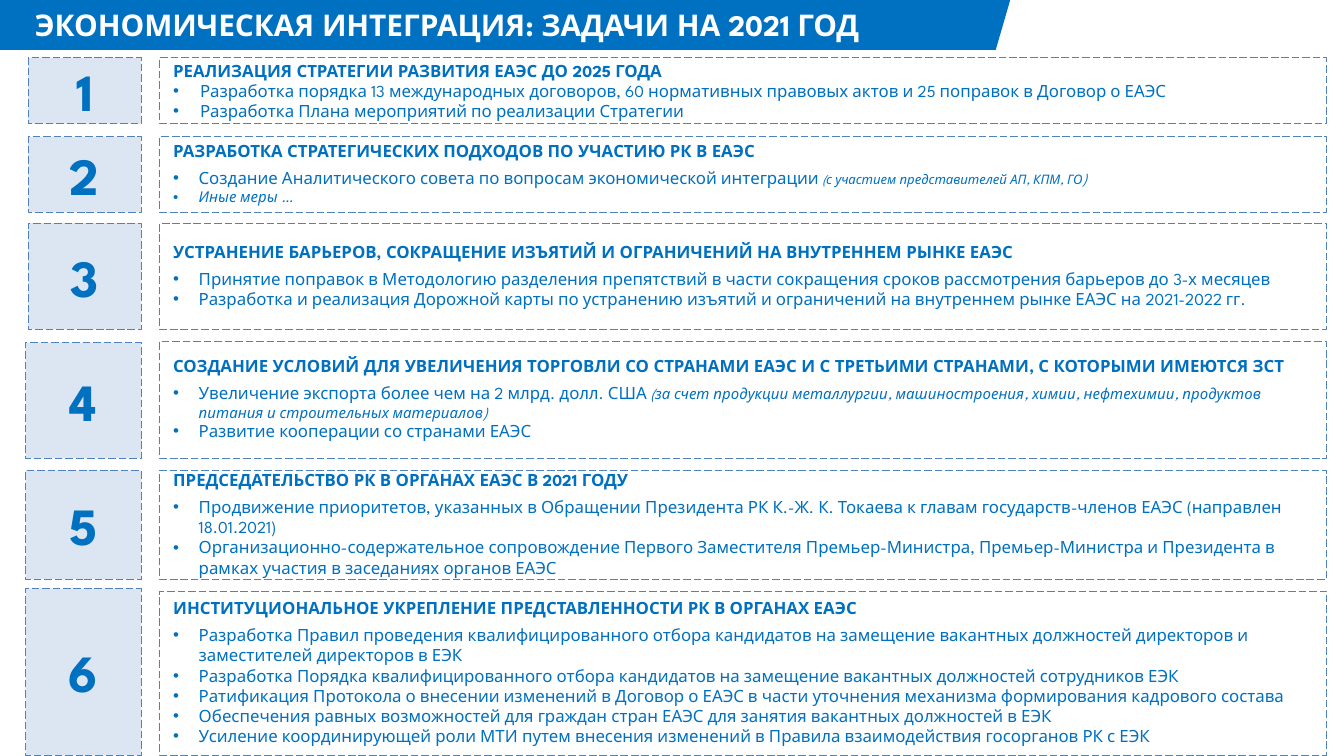
from lxml import etree
from pptx import Presentation
from pptx.dml.color import RGBColor
from pptx.enum import dml, shapes, text
from pptx.oxml import ns
from pptx.util import Pt

FONT = "League Spartan"
BLUE, PALE, WHITE, BORDER = "0070C0", "DCE6F2", "FFFFFF", "4F81BD"
NUMBER_RIGHT, BODY_LEFT, BODY_WIDTH = 75.6, 85.7, 625

# Each task: body (top, height), number (left, top, height), heading, bullets.
# A bullet is a list of (text, size, italic) runs.
TASKS = [
    ((31, 35.3), (15.1, 31, 35.3),
     "РЕАЛИЗАЦИЯ СТРАТЕГИИ РАЗВИТИЯ ЕАЭС ДО 2025 ГОДА",
     [[("Разработка порядка 13 международных договоров, 60 нормативных правовых актов "
        "и 25 поправок в Договор о ЕАЭС", 9, False)],
      [("Разработка Плана мероприятий по реализации Стратегии", 9, False)]]),
    ((73.4, 40.3), (15.1, 73.4, 40.3),
     "РАЗРАБОТКА СТРАТЕГИЧЕСКИХ ПОДХОДОВ ПО УЧАСТИЮ РК В ЕАЭС",
     [[("Создание Аналитического совета по вопросам экономической интеграции ", 9, False),
       ("(с участием представителей АП, КПМ, ГО", 7, True), (")", 8, True)],
      [("Иные меры …", 8, True)]]),
    ((119.5, 56.9), (15.1, 119.5, 56.9),
     "УСТРАНЕНИЕ БАРЬЕРОВ, СОКРАЩЕНИЕ ИЗЪЯТИЙ И ОГРАНИЧЕНИЙ НА ВНУТРЕННЕМ РЫНКЕ ЕАЭС",
     [[("Принятие поправок в Методологию разделения препятствий в части сокращения "
        "сроков рассмотрения барьеров до 3-х месяцев", 9, False)],
      [("Разработка и реализация Дорожной карты по устранению изъятий и ограничений "
        "на внутреннем рынке ЕАЭС на 2021-2022 гг.", 9, False)]]),
    ((182.9, 62.6), (13.7, 183.6, 61.9),
     "СОЗДАНИЕ УСЛОВИЙ ДЛЯ УВЕЛИЧЕНИЯ ТОРГОВЛИ СО СТРАНАМИ ЕАЭС И С ТРЕТЬИМИ СТРАНАМИ, "
     "С КОТОРЫМИ ИМЕЮТСЯ ЗСТ",
     [[("Увеличение экспорта более чем на 2 млрд. долл. США ", 9, False),
       ("(за счет продукции металлургии, машиностроения, химии, нефтехимии, продуктов "
        "питания и строительных материалов)", 8, True)],
      [("Развитие кооперации со странами ЕАЭС", 9, False)]]),
    ((252, 58.3), (13.7, 252, 58.3),
     "ПРЕДСЕДАТЕЛЬСТВО РК В ОРГАНАХ ЕАЭС В 2021 ГОДУ",
     [[("Продвижение приоритетов, указанных в Обращении Президента РК К.-Ж. К. Токаева "
        "к главам государств-членов ЕАЭС (направлен 18.01.2021)", 9, False)],
      [("Организационно-содержательное сопровождение Первого Заместителя "
        "Премьер-Министра, Премьер-Министра и Президента в рамках участия в заседаниях "
        "органов ЕАЭС", 9, False)]]),
    ((316.8, 87.8), (13.7, 315.4, 89.3),
     "ИНСТИТУЦИОНАЛЬНОЕ УКРЕПЛЕНИЕ ПРЕДСТАВЛЕННОСТИ РК В ОРГАНАХ ЕАЭС",
     [[("Разработка Правил проведения квалифицированного отбора кандидатов на замещение "
        "вакантных должностей директоров и заместителей директоров в ЕЭК", 9, False)],
      [("Разработка Порядка квалифицированного отбора кандидатов на замещение вакантных "
        "должностей сотрудников ЕЭК", 9, False)],
      [("Ратификация Протокола о внесении изменений в Договор о ЕАЭС в части уточнения "
        "механизма формирования кадрового состава", 9, False)],
      [("Обеспечения равных возможностей для граждан стран ЕАЭС для занятия вакантных "
        "должностей в ЕЭК", 9, False)],
      [("Усиление координирующей роли МТИ путем внесения изменений в Правила "
        "взаимодействия госорганов РК с ЕЭК", 9, False)]]),
]


def color(value):
    """Return the colour of a hex string."""
    return RGBColor.from_string(value)


def format_run(run, size, fill=BLUE, bold=False, italic=False):
    """Set the font of one run."""
    font = run.font
    font.name, font.size, font.bold, font.italic = FONT, Pt(size), bold, italic
    font.color.rgb = color(fill)


def add_block(parent, kind, left, top, width, height, fill):
    """Add a plain filled shape without outline or shadow."""
    shape = parent.add_shape(kind, Pt(left), Pt(top), Pt(width), Pt(height))
    shape.shadow.inherit = False
    shape.fill.solid()
    shape.fill.fore_color.rgb = color(fill)
    shape.line.fill.background()
    return shape


def add_dashed_box(slide, left, top, width, height, fill):
    """Add a dashed rectangle and return its centred text frame."""
    shape = add_block(slide.shapes, shapes.MSO_SHAPE.RECTANGLE, left, top, width, height, fill)
    shape.line.color.rgb = color(BORDER)
    shape.line.width = Pt(0.5)
    shape.line.dash_style = dml.MSO_LINE.LONG_DASH
    frame = shape.text_frame
    frame.word_wrap = True
    frame.vertical_anchor = text.MSO_ANCHOR.MIDDLE
    frame.margin_top = frame.margin_bottom = 0
    return frame


def add_banner(slide):
    """Add the banner and place the title on it."""
    group = slide.shapes.add_group_shape()
    banner = add_block(group.shapes, shapes.MSO_SHAPE.PARALLELOGRAM, 0, -0.7, 541.4, 27.4, BLUE)
    banner.adjustments[0] = 0.29
    add_block(group.shapes, shapes.MSO_SHAPE.RECTANGLE, 0, -0.7, 30.2, 27.4, BLUE)
    title = slide.shapes.title
    slide.shapes.element.append(title.element)
    title.left, title.top, title.width, title.height = Pt(11.5), Pt(0), Pt(586.8), Pt(26.6)
    frame = title.text_frame
    frame.text = "ЭКОНОМИЧЕСКАЯ ИНТЕГРАЦИЯ: ЗАДАЧИ НА 2021 ГОД"
    frame.vertical_anchor = text.MSO_ANCHOR.MIDDLE
    frame.auto_size = text.MSO_AUTO_SIZE.NONE
    frame.paragraphs[0].alignment = text.PP_ALIGN.LEFT
    format_run(frame.paragraphs[0].runs[0], 16, WHITE, bold=True)


def add_number(slide, number, left, top, height):
    """Add the box with the number of a task."""
    frame = add_dashed_box(slide, left, top, NUMBER_RIGHT - left, height, PALE)
    frame.text = str(number)
    frame.paragraphs[0].alignment = text.PP_ALIGN.CENTER
    format_run(frame.paragraphs[0].runs[0], 28, bold=True)


def add_bullet(frame, runs, indent):
    """Add one bulleted paragraph made of the given runs."""
    paragraph = frame.add_paragraph()
    paragraph.alignment = text.PP_ALIGN.LEFT
    properties = paragraph._p.get_or_add_pPr()
    properties.set("marL", str(Pt(indent)))
    properties.set("indent", str(-Pt(indent)))
    etree.SubElement(properties, ns.qn("a:buFont")).set("typeface", "Arial")
    etree.SubElement(properties, ns.qn("a:buChar")).set("char", "•")
    for content, size, italic in runs:
        run = paragraph.add_run()
        run.text = content
        format_run(run, size, italic=italic)


def add_task(slide, top, height, heading, bullets, compact):
    """Add the box with the heading and bullets of a task."""
    frame = add_dashed_box(slide, BODY_LEFT, top, BODY_WIDTH, height, WHITE)
    frame.text = heading
    paragraph = frame.paragraphs[0]
    paragraph.alignment = text.PP_ALIGN.LEFT
    if not compact:
        paragraph.line_spacing = 0.9
        paragraph.space_after = Pt(3.4)
    format_run(paragraph.runs[0], 9, bold=True)
    for runs in bullets:
        add_bullet(frame, runs, 14.4 if compact else 13.7)


def main():
    """Build the slide and save it."""
    presentation = Presentation()
    presentation.slide_width, presentation.slide_height = Pt(720), Pt(405)
    slide = presentation.slides.add_slide(presentation.slide_layouts[5])
    add_banner(slide)
    for number, (body, badge, heading, bullets) in enumerate(TASKS, 1):
        add_number(slide, number, *badge)
        add_task(slide, *body, heading, bullets, compact=number == 1)
    presentation.save("out.pptx")


if __name__ == "__main__":
    main()
